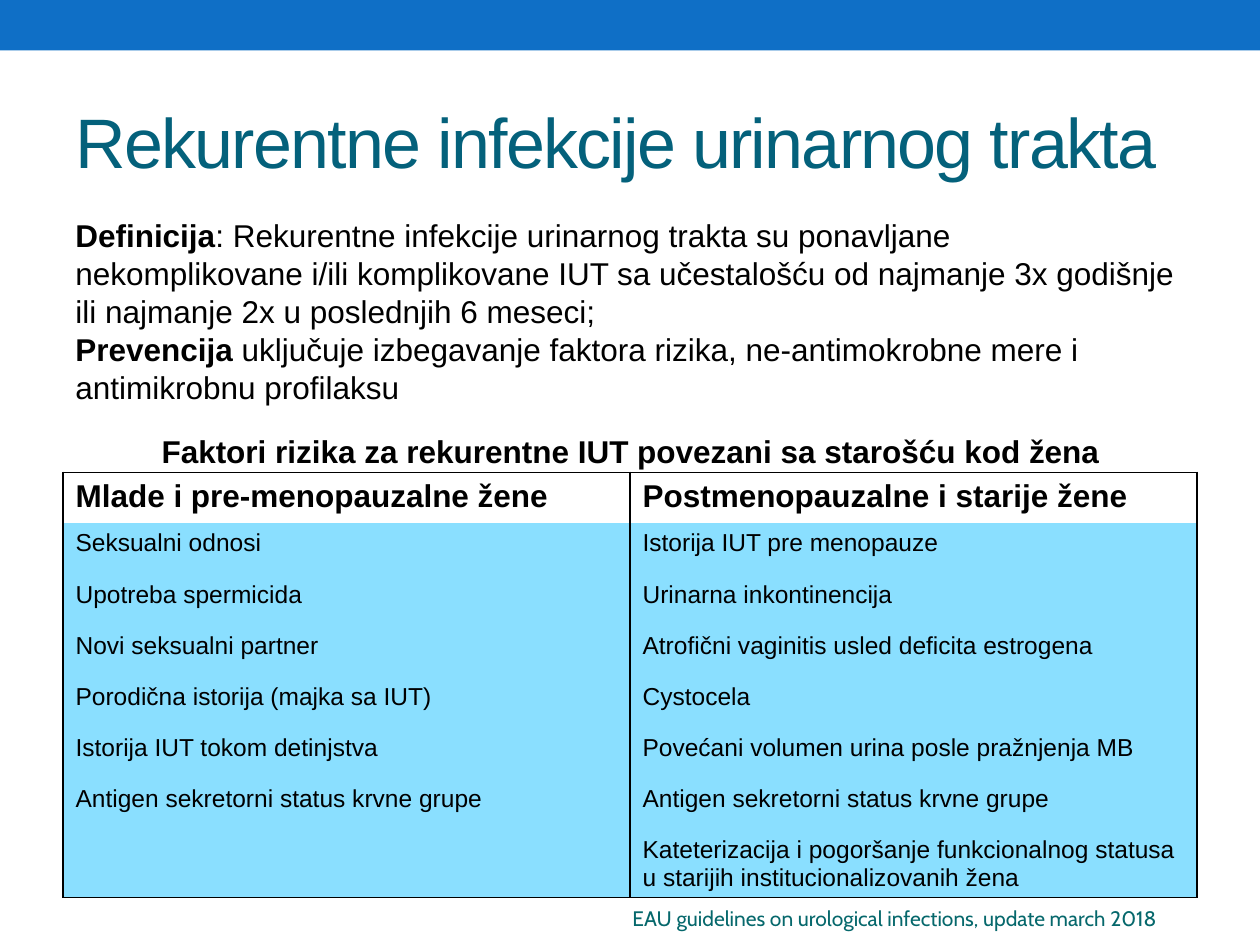
from lxml import etree
from pptx import Presentation
from pptx.dml.color import RGBColor
from pptx.enum.shapes import MSO_SHAPE
from pptx.enum.text import MSO_ANCHOR, PP_ALIGN
from pptx.oxml.ns import qn
from pptx.util import Cm, Pt

RECT = MSO_SHAPE.RECTANGLE
MIDDLE = MSO_ANCHOR.MIDDLE
LEFT, CENTER = PP_ALIGN.LEFT, PP_ALIGN.CENTER

COLORS = {
    "bar": "0F6FC6",
    "title": "04617B",
    "text": "000000",
    "head": "FFFFFF",
    "body": "8ADFFF",
    "source": "06686C",
}


def add_run(para, text, size, color="text", bold=False, font="Arial"):
    run = para.add_run()
    run.text = text
    run.font.name = font
    run.font.size = Pt(size)
    run.font.bold = bold
    run.font.color.rgb = RGBColor.from_string(COLORS[color])
    return run


def set_edges(cell, sides):
    """Draw black lines on the given sides and clear the others."""
    props = cell._tc.get_or_add_tcPr()
    for i, side in enumerate("LRTB"):
        line = etree.Element(qn(f"a:ln{side}"), w=str(Pt(1)))
        if side in sides:
            fill = etree.SubElement(line, qn("a:solidFill"))
            etree.SubElement(fill, qn("a:srgbClr"), val=COLORS["text"])
        else:
            etree.SubElement(line, qn("a:noFill"))
        props.insert(i, line)


prs = Presentation()
prs.slide_width, prs.slide_height = Cm(25.4), Cm(19.05)
slide = prs.slides.add_slide(prs.slide_layouts[5])
shapes = slide.shapes

# Top bar
bar = shapes.add_shape(RECT, 0, 0, prs.slide_width, Cm(1.02))
bar.shadow.inherit = False
bar.fill.solid()
bar.fill.fore_color.rgb = RGBColor.from_string(COLORS["bar"])
bar.line.fill.background()

# Title
title = shapes.title
title.left, title.top, title.width, title.height = Cm(1.27), Cm(1.47), Cm(22.86), Cm(2.74)
title.text_frame.vertical_anchor = MIDDLE
para = title.text_frame.paragraphs[0]
para.alignment = LEFT
run = add_run(para, "Rekurentne infekcije urinarnog trakta", 40, "title")
run.font._element.set("spc", "-100")

# Risk factor table
rows = [
    ("Mlade i pre-menopauzalne žene", "Postmenopauzalne i starije žene"),
    ("Seksualni odnosi", "Istorija IUT pre menopauze"),
    ("Upotreba spermicida", "Urinarna inkontinencija"),
    ("Novi seksualni partner", "Atrofični vaginitis usled deficita estrogena"),
    ("Porodična istorija (majka sa IUT)", "Cystocela"),
    ("Istorija IUT tokom detinjstva", "Povećani volumen urina posle pražnjenja MB"),
    ("Antigen sekretorni status krvne grupe", "Antigen sekretorni status krvne grupe"),
    ("", "Kateterizacija i pogoršanje funkcionalnog statusa "
         "u starijih institucionalizovanih žena"),
]
high = Cm(1.03)
table = shapes.add_table(len(rows), 2, Cm(1.27), Cm(9.52), Cm(22.86), high * len(rows)).table
for r, row in enumerate(rows):
    table.rows[r].height = high
    head = r == 0
    sides = "LR" + ("T" if head else "") + ("B" if r == len(rows) - 1 else "")
    for c, text in enumerate(row):
        cell = table.cell(r, c)
        cell.fill.solid()
        cell.fill.fore_color.rgb = RGBColor.from_string(COLORS["head" if head else "body"])
        set_edges(cell, sides)
        if text:
            add_run(cell.text_frame.paragraphs[0], text, 18 if head else 14, bold=head)

# Text boxes: place, alignment, size, colour, font, paragraphs of (text, bold)
boxes = [
    ((1.27, 4.24, 22.86, 4.11), LEFT, 18, "text", "Arial", [
        [("Definicija", True),
         (": Rekurentne infekcije urinarnog trakta su ponavljane nekomplikovane i/ili "
          "komplikovane IUT sa učestalošću od najmanje 3x godišnje ili najmanje 2x u "
          "poslednjih 6 meseci;", False)],
        [("Prevencija", True),
         (" uključuje izbegavanje faktora rizika, ne-antimokrobne mere i "
          "antimikrobnu profilaksu", False)],
    ]),
    ((1.3, 8.59, 22.83, 1.02), CENTER, 18, "text", "Arial", [
        [("Faktori rizika za rekurentne IUT povezani sa starošću kod žena", True)],
    ]),
    ((12.5, 18.14, 12.7, 0.76), LEFT, 12, "source", "Cabin", [
        [("EAU guidelines on urological infections, update march 2018", False)],
    ]),
]
for place, align, size, color, font, paras in boxes:
    frame = shapes.add_textbox(*map(Cm, place)).text_frame
    frame.word_wrap = True
    for i, runs in enumerate(paras):
        para = frame.add_paragraph() if i else frame.paragraphs[0]
        para.alignment = align
        for text, bold in runs:
            add_run(para, text, size, color, bold, font)

prs.save("out.pptx")
